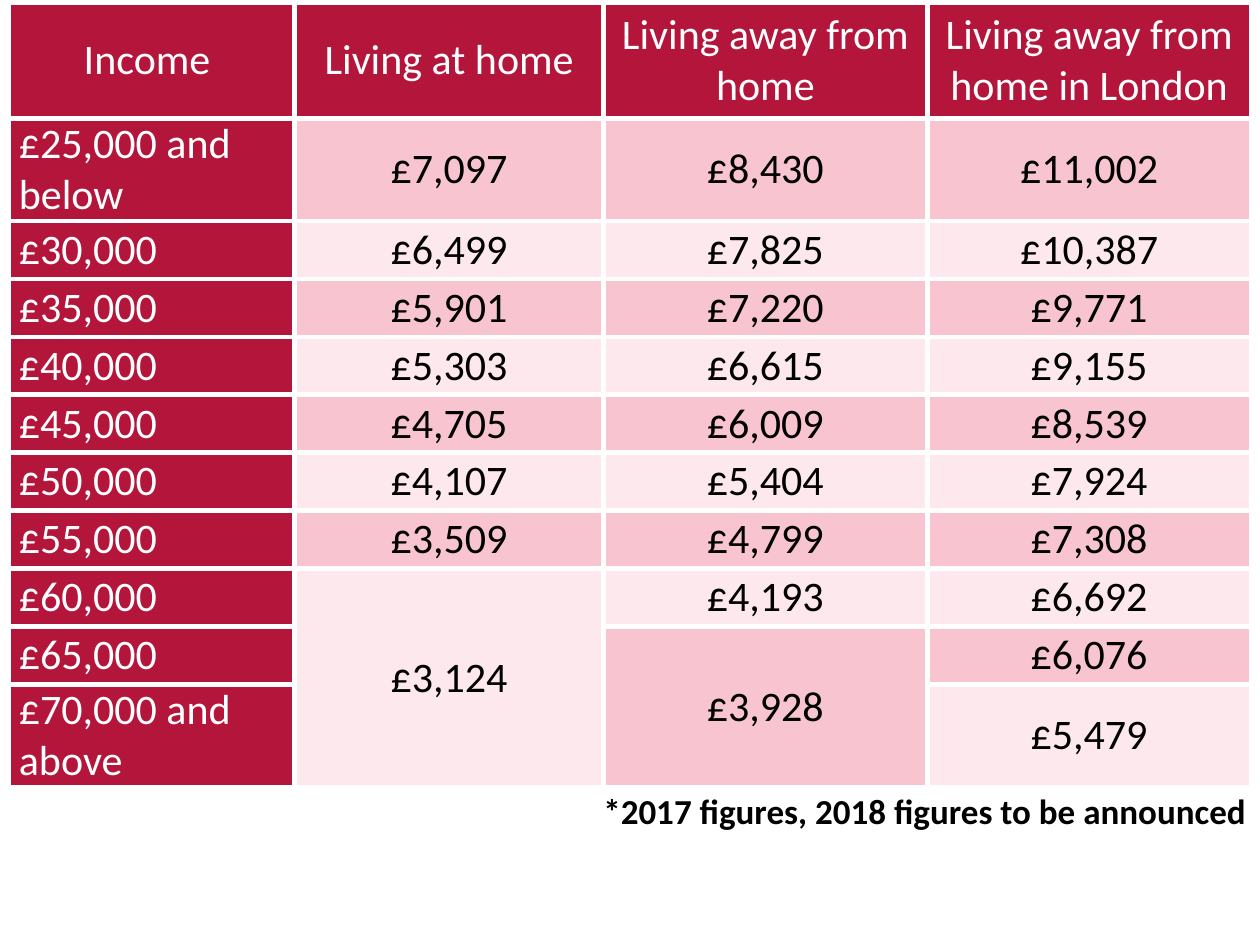
import pptx
import pptx.util
import pptx.dml.color
import pptx.enum.text
import pptx.oxml
import pptx.oxml.ns

Inches, Pt = pptx.util.Inches, pptx.util.Pt
RGBColor = pptx.dml.color.RGBColor
PP_ALIGN = pptx.enum.text.PP_ALIGN

HEADINGS = ["Income ", "Living at home", "Living away from home",
            "Living away from home in London"]
LOANS = [
    ("£25,000 and below", "£7,097", "£8,430", "£11,002"),
    ("£30,000", "£6,499", "£7,825", "£10,387"),
    ("£35,000", "£5,901", "£7,220", "£9,771"),
    ("£40,000", "£5,303", "£6,615", "£9,155"),
    ("£45,000", "£4,705", "£6,009", "£8,539"),
    ("£50,000", "£4,107", "£5,404", "£7,924"),
    ("£55,000", "£3,509", "£4,799", "£7,308"),
    ("£60,000", "£3,124", "£4,193", "£6,692"),
    ("£65,000", None, "£3,928", "£6,076"),
    ("£70,000 and above", None, None, "£5,479"),
]
FOOTNOTE = "*2017 figures, 2018 figures to be announced"

FONT = "Calibri"
CRIMSON = RGBColor(0xB4, 0x15, 0x3A)
PINK = RGBColor(0xF8, 0xC4, 0xD0)
PALE_PINK = RGBColor(0xFC, 0xE8, 0xED)
WHITE = RGBColor(0xFF, 0xFF, 0xFF)
BLACK = RGBColor(0, 0, 0)

COLUMN_WIDTHS = [2.27, 2.45, 2.57, 2.57]
ROW_HEIGHTS = [0.92, 0.79] + [0.46] * (len(LOANS) - 1)
TABLE_LEFT, TABLE_TOP = 0.07, 0.02
INCOME_INDENT = 0.08


def write(paragraph, text, size, color, bold=False):
    run = paragraph.add_run()
    run.text = text
    run.font.name = FONT
    run.font.size = Pt(size)
    run.font.bold = bold
    run.font.color.rgb = color


def add_borders(cell):
    properties = cell._tc.get_or_add_tcPr()
    for position, side in enumerate(("lnL", "lnR", "lnT", "lnB")):
        border = pptx.oxml.parse_xml(
            f'<a:{side} {pptx.oxml.ns.nsdecls("a")} w="{Pt(3)}">'
            f'<a:solidFill><a:srgbClr val="{WHITE}"/></a:solidFill></a:{side}>')
        properties.insert(position, border)


def format_cell(cell, row, column, text):
    is_label = row == 0 or column == 0
    is_income = row > 0 and column == 0
    cell.margin_left = Inches(INCOME_INDENT if is_income else 0)
    cell.margin_right = cell.margin_top = cell.margin_bottom = 0
    cell.vertical_anchor = pptx.enum.text.MSO_ANCHOR.MIDDLE
    cell.fill.solid()
    band = PINK if row % 2 else PALE_PINK
    cell.fill.fore_color.rgb = CRIMSON if is_label else band
    add_borders(cell)
    if text is not None:
        paragraph = cell.text_frame.paragraphs[0]
        paragraph.alignment = PP_ALIGN.LEFT if is_income else PP_ALIGN.CENTER
        write(paragraph, text, 24, WHITE if is_label else BLACK)


def add_loan_table(slide):
    rows = [HEADINGS, *LOANS]
    table = slide.shapes.add_table(
        len(rows), len(HEADINGS), Inches(TABLE_LEFT), Inches(TABLE_TOP),
        Inches(sum(COLUMN_WIDTHS)), Inches(sum(ROW_HEIGHTS))).table
    for column, width in zip(table.columns, COLUMN_WIDTHS):
        column.width = Inches(width)
    for row, height in zip(table.rows, ROW_HEIGHTS):
        row.height = Inches(height)
    for r, values in enumerate(rows):
        for c, text in enumerate(values):
            format_cell(table.cell(r, c), r, c, text)
    for c in range(len(HEADINGS)):
        amounts = [values[c] for values in rows]
        if None in amounts:
            first_shared = amounts.index(None) - 1
            table.cell(first_shared, c).merge(table.cell(len(rows) - 1, c))


def add_footnote(slide):
    footnote = slide.shapes.add_textbox(
        Inches(4.69), Inches(6.22), Inches(5.51), Inches(0.44))
    footnote.text_frame.word_wrap = True
    write(footnote.text_frame.paragraphs[0], FOOTNOTE, 20, BLACK, bold=True)


def main():
    presentation = pptx.Presentation()
    presentation.slide_width = Inches(10)
    presentation.slide_height = Inches(7.5)
    slide = presentation.slides.add_slide(presentation.slide_layouts[6])
    add_loan_table(slide)
    add_footnote(slide)
    presentation.save("out.pptx")


if __name__ == "__main__":
    main()
